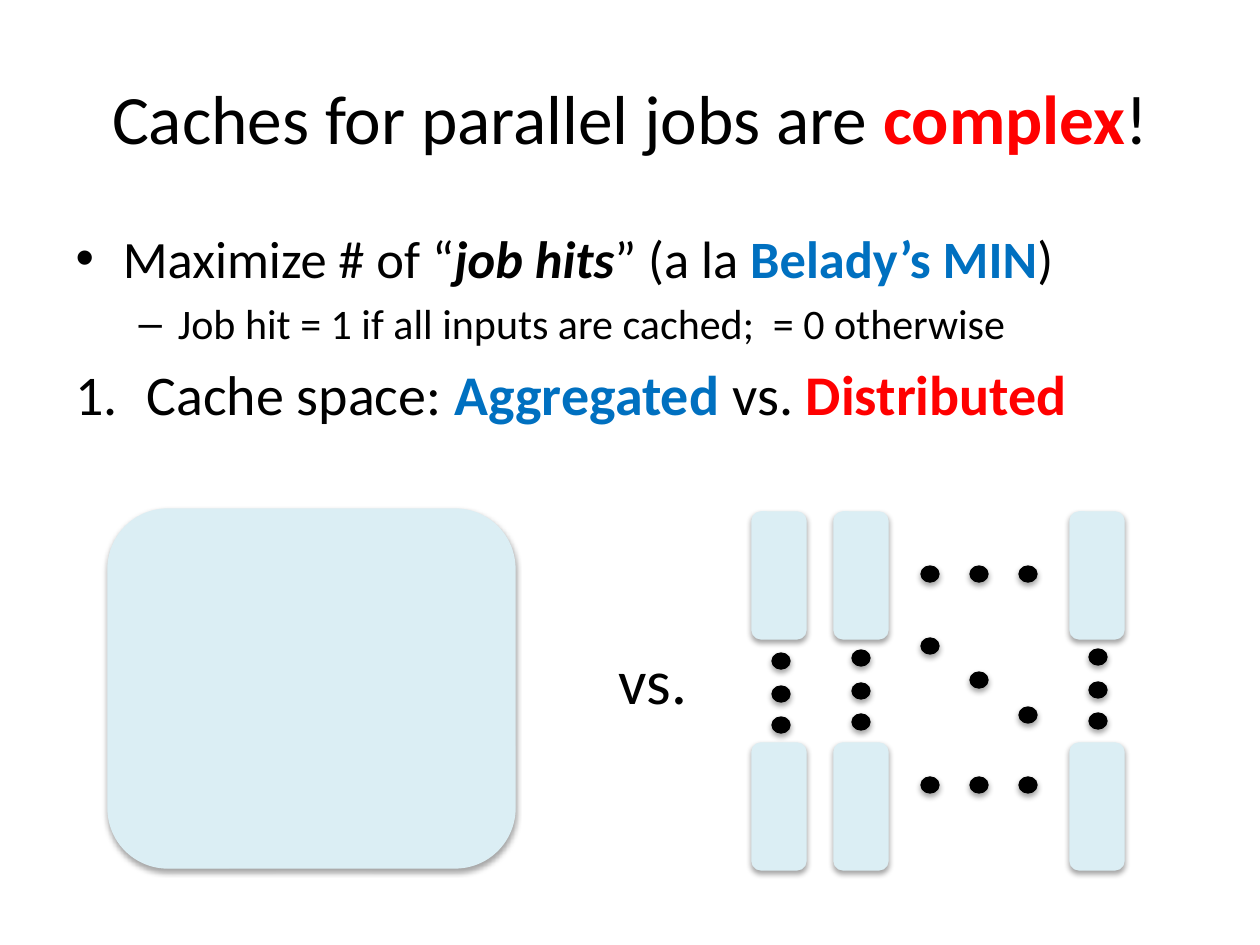
from lxml import etree
from pptx import Presentation
from pptx.dml.color import RGBColor
from pptx.enum.shapes import MSO_SHAPE
from pptx.enum.text import MSO_ANCHOR, MSO_AUTO_SIZE, PP_ALIGN
from pptx.oxml.ns import qn
from pptx.util import Emu, Pt

BLOCK, DOT = MSO_SHAPE.ROUNDED_RECTANGLE, MSO_SHAPE.OVAL
MIDDLE, CENTER = MSO_ANCHOR.MIDDLE, PP_ALIGN.CENTER
NO_FIT, GROW = MSO_AUTO_SIZE.NONE, MSO_AUTO_SIZE.SHAPE_TO_FIT_TEXT

EMU_PER_PX = 914400 / 126
FONT = "Calibri"
COLORS = {"text": "000000", "bad": "FF0000", "good": "0070C0", "cache": "DBEEF4"}

HEADING = [("Caches for parallel jobs are ", "text", ""), ("complex", "bad", "b"), ("!", "text", "")]
POINTS = [
    (0, 30, [("Maximize # of “", "text", ""), ("job hits", "text", "bi"), ("” (a la ", "text", ""),
             ("Belady’s MIN", "good", "b"), (")", "text", "")]),
    (1, 24, [("Job hit = 1 if all inputs are cached;  = 0 otherwise", "text", "")]),
    (0, 32, [("Cache space: ", "text", ""), ("Aggregated ", "good", "b"),
             ("vs. ", "text", ""), ("Distributed", "bad", "b")]),
]
VERSUS = [("vs.", "text", "")]

HEADING_BOX = (63, 38, 1134, 157)
POINTS_BOX = (63, 220, 1134, 624)
VERSUS_BOX = (606, 635, 94, 89)
AGGREGATED_BOX = (108, 509, 407, 359)

CACHE_COLUMNS, CACHE_ROWS = (752, 834, 1070), (512, 743)
CACHE_SIZE = (54, 127)
DOT_SIZE = (18, 16)
ACROSS = (921, 970, 1019)
ACROSS_ROWS = (566, 777)
DIAGONAL = (638, 672, 707)
DOWN_STARTS = ((772, 653), (852, 650), (1089, 649))
DOWN_STEPS = (0, 33, 64)


def px(*lengths):
    return [Emu(round(length * EMU_PER_PX)) for length in lengths]


def place(part, box):
    part.left, part.top, part.width, part.height = px(*box)


def write(paragraph, pieces, size):
    for words, color, style in pieces:
        run = paragraph.add_run()
        run.text = words
        run.font.name = FONT
        run.font.size = Pt(size)
        run.font.bold = "b" in style
        run.font.italic = "i" in style
        run.font.color.rgb = RGBColor.from_string(COLORS[color])


def draw(slide, kind, box, color):
    part = slide.shapes.add_shape(kind, *px(*box))
    paint = RGBColor.from_string(COLORS[color])
    part.fill.solid()
    part.fill.fore_color.rgb = paint
    part.line.color.rgb = paint
    part.line.width = Pt(0.75)
    part.shadow.inherit = False
    effects = part._element.spPr.find(qn("a:effectLst"))
    shadow = etree.SubElement(effects, qn("a:outerShdw"), blurRad="40000", dist="23000",
                              dir="5400000", rotWithShape="0")
    tint = etree.SubElement(shadow, qn("a:srgbClr"), val=COLORS["text"])
    etree.SubElement(tint, qn("a:alpha"), val="35000")


def number(paragraph):
    properties = paragraph._p.get_or_add_pPr()
    properties.set("marL", "514350")
    properties.set("indent", "-514350")
    etree.SubElement(properties, qn("a:buFont"), typeface="+mj-lt")
    etree.SubElement(properties, qn("a:buAutoNum"), type="arabicPeriod")


def main():
    deck = Presentation()
    deck.slide_width, deck.slide_height = px(1260, 945)
    slide = deck.slides.add_slide(deck.slide_layouts[1])

    heading, points = slide.placeholders
    place(heading, HEADING_BOX)
    heading.text_frame.auto_size = NO_FIT
    heading.text_frame.vertical_anchor = MIDDLE
    heading.text_frame.paragraphs[0].alignment = CENTER
    write(heading.text_frame.paragraphs[0], HEADING, 39.6)

    place(points, POINTS_BOX)
    body = points.text_frame
    body.auto_size = NO_FIT
    for index, (level, size, pieces) in enumerate(POINTS):
        paragraph = body.add_paragraph() if index else body.paragraphs[0]
        paragraph.level = level
        write(paragraph, pieces, size)
    number(body.paragraphs[-1])

    draw(slide, BLOCK, AGGREGATED_BOX, "cache")
    for top in CACHE_ROWS:
        for left in CACHE_COLUMNS:
            draw(slide, BLOCK, (left, top, *CACHE_SIZE), "cache")

    dots = [(left, top) for top in ACROSS_ROWS for left in ACROSS]
    dots += zip(ACROSS, DIAGONAL)
    dots += [(left, top + step) for left, top in DOWN_STARTS for step in DOWN_STEPS]
    for left, top in dots:
        draw(slide, DOT, (left, top, *DOT_SIZE), "text")

    versus = slide.shapes.add_textbox(*px(*VERSUS_BOX)).text_frame
    versus.word_wrap = False
    versus.auto_size = GROW
    write(versus.paragraphs[0], VERSUS, 36)

    deck.save("out.pptx")


if __name__ == "__main__":
    main()
